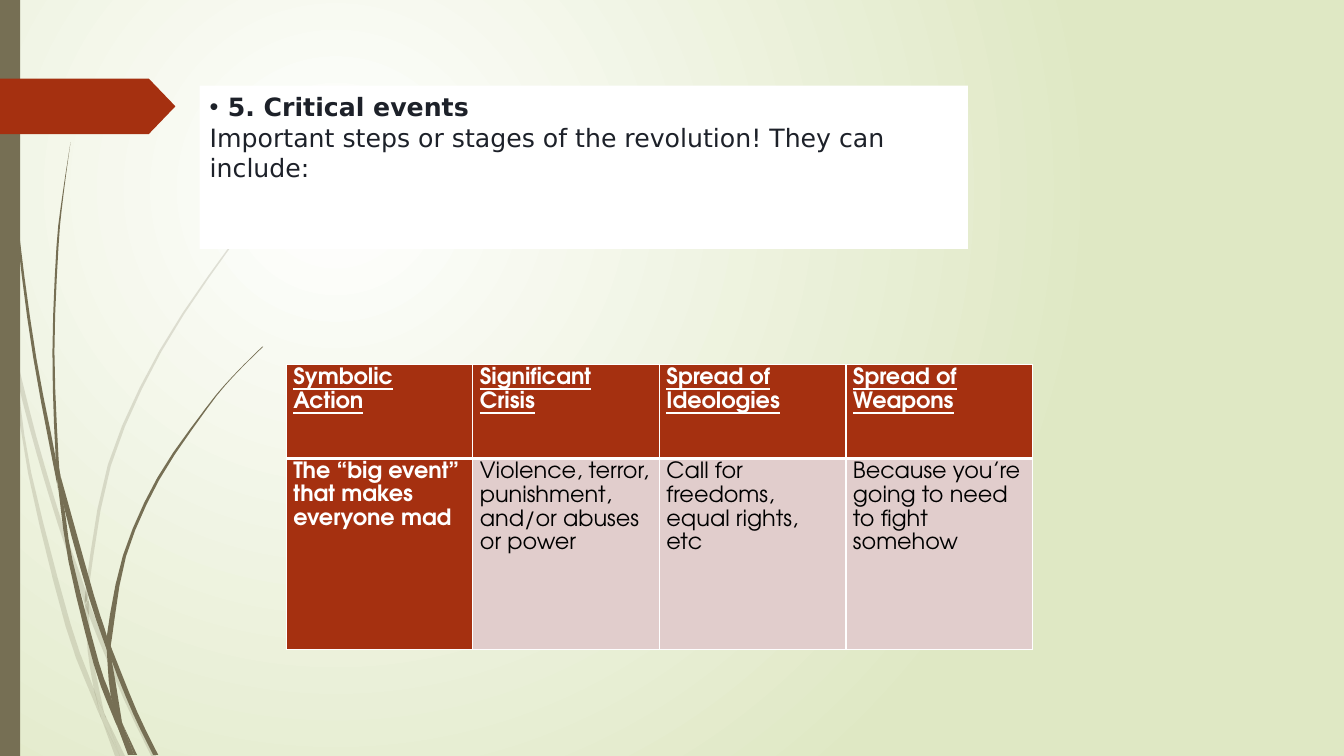
from dataclasses import dataclass

from lxml import etree
from pptx import Presentation
from pptx import util as u
from pptx.dml.color import RGBColor
from pptx.enum import shapes, text
from pptx.oxml.ns import qn

PX = 9144  # EMU in one px, at 100 px to the inch
CURVE_STEPS = 3

Point = tuple[int, int]


@dataclass(frozen=True)
class Theme:
    white: str = "FFFFFF"
    black: str = "000000"
    sage: str = "DFE8C4"
    olive: str = "766F54"
    rust: str = "A53010"
    blush: str = "E1CDCC"
    ink: str = "1D2129"
    box_font: str = "DejaVu Sans"
    table_font: str = "TeX Gyre Adventor"
    box_size: int = 18
    table_size: int = 16


@dataclass(frozen=True)
class Blade:
    """A piece of grass between two edges, both listed from tip to root."""
    left: list[Point]
    right: list[Point]


@dataclass(frozen=True)
class Tuft:
    opacity: int
    blades: list[Blade]


@dataclass(frozen=True)
class Stage:
    heading: str
    detail: str


THEME = Theme()

PALE_TUFT = Tuft(20, [
    Blade([(0, 299), (10, 344), (11, 350)], [(0, 282), (9, 322), (11, 350)]),
    Blade([(14, 345), (17, 376), (36, 449), (58, 522), (84, 599)],
          [(14, 345), (36, 433), (62, 520), (85, 586), (84, 599)]),
    Blade([(88, 596), (88, 610), (123, 694), (150, 750)],
          [(88, 596), (92, 607), (127, 692), (155, 750)]),
    Blade([(105, 711), (119, 750)], [(105, 711), (124, 750)]),
    Blade([(11, 350), (28, 470), (65, 621), (92, 693), (101, 714)],
          [(11, 350), (17, 376), (31, 469), (70, 619), (93, 683), (99, 707), (101, 714)]),
    Blade([(84, 599), (87, 646), (93, 683), (96, 692), (105, 711)],
          [(84, 599), (88, 608), (91, 646), (103, 706), (105, 711)]),
    Blade([(312, 153), (289, 175), (268, 197), (228, 244), (158, 348), (107, 461), (85, 584),
           (88, 596)],
          [(312, 154), (290, 175), (268, 198), (229, 245), (160, 349), (110, 462), (88, 584),
           (88, 596)]),
    Blade([(101, 714), (114, 750)], [(101, 714), (119, 750)]),
    Blade([(85, 586), (84, 599), (88, 610)], [(85, 586), (88, 596), (88, 610)]),
    Blade([(93, 683), (99, 707), (101, 714), (119, 750)],
          [(93, 683), (96, 692), (105, 711), (119, 750)]),
])

DARK_TUFT = Tuft(100, [
    Blade([(3, 0), (4, 48), (7, 110), (17, 233), (33, 355), (56, 477), (57, 481)],
          [(4, 0), (5, 48), (8, 109), (19, 232), (36, 355), (55, 453), (57, 481)]),
    Blade([(60, 472), (64, 505), (88, 592), (106, 645)],
          [(60, 472), (93, 590), (106, 631), (106, 645)]),
    Blade([(110, 641), (111, 656), (132, 708), (152, 749)],
          [(110, 641), (113, 649), (136, 706), (157, 749)]),
    Blade([(57, 477), (68, 557), (93, 659), (111, 708), (117, 722)],
          [(57, 477), (64, 505), (72, 556), (98, 657), (110, 691), (117, 722)]),
    Blade([(70, 141), (62, 193), (56, 245), (52, 349), (55, 449), (60, 472)],
          [(70, 141), (63, 193), (58, 245), (54, 349), (58, 453), (60, 472)]),
    Blade([(122, 719), (133, 749)], [(122, 719), (136, 749)]),
    Blade([(55, 449), (57, 477), (64, 505)], [(55, 449), (60, 472), (64, 505)]),
    Blade([(260, 344), (231, 373), (204, 405), (156, 474), (122, 551), (106, 631), (110, 641)],
          [(261, 344), (231, 374), (205, 406), (158, 476), (125, 552), (111, 633), (110, 641)]),
    Blade([(117, 722), (127, 749)], [(117, 722), (131, 749)]),
    Blade([(106, 645), (110, 691), (122, 719)],
          [(106, 645), (111, 656), (121, 716), (122, 719)]),
    Blade([(106, 631), (106, 645), (111, 656)], [(106, 631), (110, 641), (111, 656)]),
    Blade([(110, 691), (117, 722), (130, 749)],
          [(110, 691), (116, 706), (122, 719), (133, 749)]),
])

STAGES = [
    Stage("Symbolic Action", "The “big event” that makes everyone mad"),
    Stage("Significant Crisis", "Violence, terror, punishment, and/or abuses or power"),
    Stage("Spread of Ideologies", "Call for freedoms, equal rights, etc"),
    Stage("Spread of Weapons", "Because you’re going to need to fight somehow"),
]


def px(length: float) -> u.Emu:
    return u.Emu(round(length * PX))


def paint(shape, color: str, opacity: int = 100) -> None:
    shape.shadow.inherit = False
    shape.fill.solid()
    shape.fill.fore_color.rgb = RGBColor.from_string(color)
    shape.line.fill.background()
    if opacity < 100:
        tint = shape.element.spPr.find(f".//{qn('a:srgbClr')}")
        etree.SubElement(tint, qn("a:alpha"), val=str(opacity * 1000))


def style_runs(para, font: str, size: int, color: str, bold: bool, underline: bool = False) -> None:
    for span in para.runs:
        span.font.name, span.font.size = font, u.Pt(size)
        span.font.bold, span.font.underline = bold, underline
        span.font.color.rgb = RGBColor.from_string(color)


def smooth(edge: list[Point]) -> list[tuple[int, int]]:
    """Points in EMU along a Catmull-Rom curve through the edge."""
    padded = [edge[0], *edge, edge[-1]]
    curve = []
    for a, b, c, d in zip(padded, padded[1:], padded[2:], padded[3:]):
        for step in range(CURVE_STEPS):
            t = step / CURVE_STEPS
            curve.append(tuple(
                px(b[i] + (c[i] - a[i]) * t / 2
                   + (2 * a[i] - 5 * b[i] + 4 * c[i] - d[i]) * t ** 2 / 2
                   + (3 * b[i] - a[i] - 3 * c[i] + d[i]) * t ** 3 / 2)
                for i in (0, 1)))
    return curve + [(px(edge[-1][0]), px(edge[-1][1]))]


def draw_background(page) -> None:
    fill = page.background.fill
    fill.gradient()
    for stop, color in zip(fill.gradient_stops, (THEME.white, THEME.sage)):
        stop.color.rgb = RGBColor.from_string(color)
    gradient = page.element.find(f".//{qn('a:gradFill')}")
    gradient.remove(gradient.find(qn("a:lin")))
    circle = etree.SubElement(gradient, qn("a:path"), path="circle")
    etree.SubElement(circle, qn("a:fillToRect"), l="50000", t="50000", r="100000", b="100000")


def draw_tuft(page, tuft: Tuft) -> None:
    for blade in tuft.blades:
        outline = smooth(blade.left) + smooth(blade.right)[::-1]
        builder = page.shapes.build_freeform(*outline[0])
        builder.add_line_segments(outline[1:], close=True)
        paint(builder.convert_to_shape(), THEME.olive, tuft.opacity)


def draw_side_marks(page) -> None:
    kinds = shapes.MSO_SHAPE
    bar = page.shapes.add_shape(kinds.RECTANGLE, 0, 0, px(20), px(750))
    paint(bar, THEME.olive)
    tag = page.shapes.add_shape(kinds.PENTAGON, 0, px(78), px(174), px(55))
    tag.adjustments[0] = 0.48
    paint(tag, THEME.rust)


def set_borders(cell, widths: dict[str, int]) -> None:
    properties = cell._tc.get_or_add_tcPr()
    for place, (side, width) in enumerate(widths.items()):
        line = etree.Element(qn(f"a:ln{side}"), w=str(u.Pt(width)))
        solid = etree.SubElement(line, qn("a:solidFill"))
        etree.SubElement(solid, qn("a:srgbClr"), val=THEME.white)
        properties.insert(place, line)


def draw_stages(page) -> None:
    table = page.shapes.add_table(2, len(STAGES), px(284), px(362), px(740), px(282)).table
    table.rows[0].height, table.rows[1].height = px(93), px(189)
    for col, stage in enumerate(STAGES):
        table.columns[col].width = px(185)
        for row, words in enumerate((stage.heading, stage.detail)):
            cell = table.cell(row, col)
            strong = row == 0 or col == 0
            cell.margin_left = cell.margin_right = px(7)
            cell.margin_top = cell.margin_bottom = 0
            cell.fill.solid()
            cell.fill.fore_color.rgb = RGBColor.from_string(THEME.rust if strong else THEME.blush)
            cell.text_frame.text = words
            para = cell.text_frame.paragraphs[0]
            para.line_spacing = 1.15
            style_runs(para, THEME.table_font, THEME.table_size,
                       THEME.white if strong else THEME.black, strong, row == 0)
            set_borders(cell, {"L": 1, "R": 1, "T": 3 if row else 1, "B": 1 if row else 3})


def draw_title(page) -> None:
    box = page.shapes.title
    box.left, box.top, box.width, box.height = px(198), px(85), px(762), px(162)
    box.fill.solid()
    box.fill.fore_color.rgb = RGBColor.from_string(THEME.white)
    frame = box.text_frame
    frame.text = "5. Critical events\nImportant steps or stages of the revolution! They can include:"
    frame.word_wrap, frame.auto_size = True, text.MSO_AUTO_SIZE.NONE
    frame.vertical_anchor = text.MSO_ANCHOR.TOP
    frame.margin_left = frame.margin_right = px(10)
    frame.margin_top = px(6)
    for para, bold in zip(frame.paragraphs, (True, False)):
        para.alignment = text.PP_ALIGN.LEFT
        style_runs(para, THEME.box_font, THEME.box_size, THEME.ink, bold)
    bulleted = frame.paragraphs[0]._p.get_or_add_pPr()
    bulleted.set("marL", str(px(18)))
    bulleted.set("indent", str(px(-18)))
    etree.SubElement(bulleted, qn("a:buFont"), typeface="Arial")
    etree.SubElement(bulleted, qn("a:buChar"), char="•")
    box.element.getparent().append(box.element)  # in front of the grass


def main() -> None:
    deck = Presentation()
    deck.slide_width, deck.slide_height = px(1333), px(750)
    page = deck.slides.add_slide(deck.slide_layouts[5])
    draw_background(page)
    for tuft in (PALE_TUFT, DARK_TUFT):
        draw_tuft(page, tuft)
    draw_side_marks(page)
    draw_stages(page)
    draw_title(page)
    deck.save("out.pptx")


if __name__ == "__main__":
    main()
